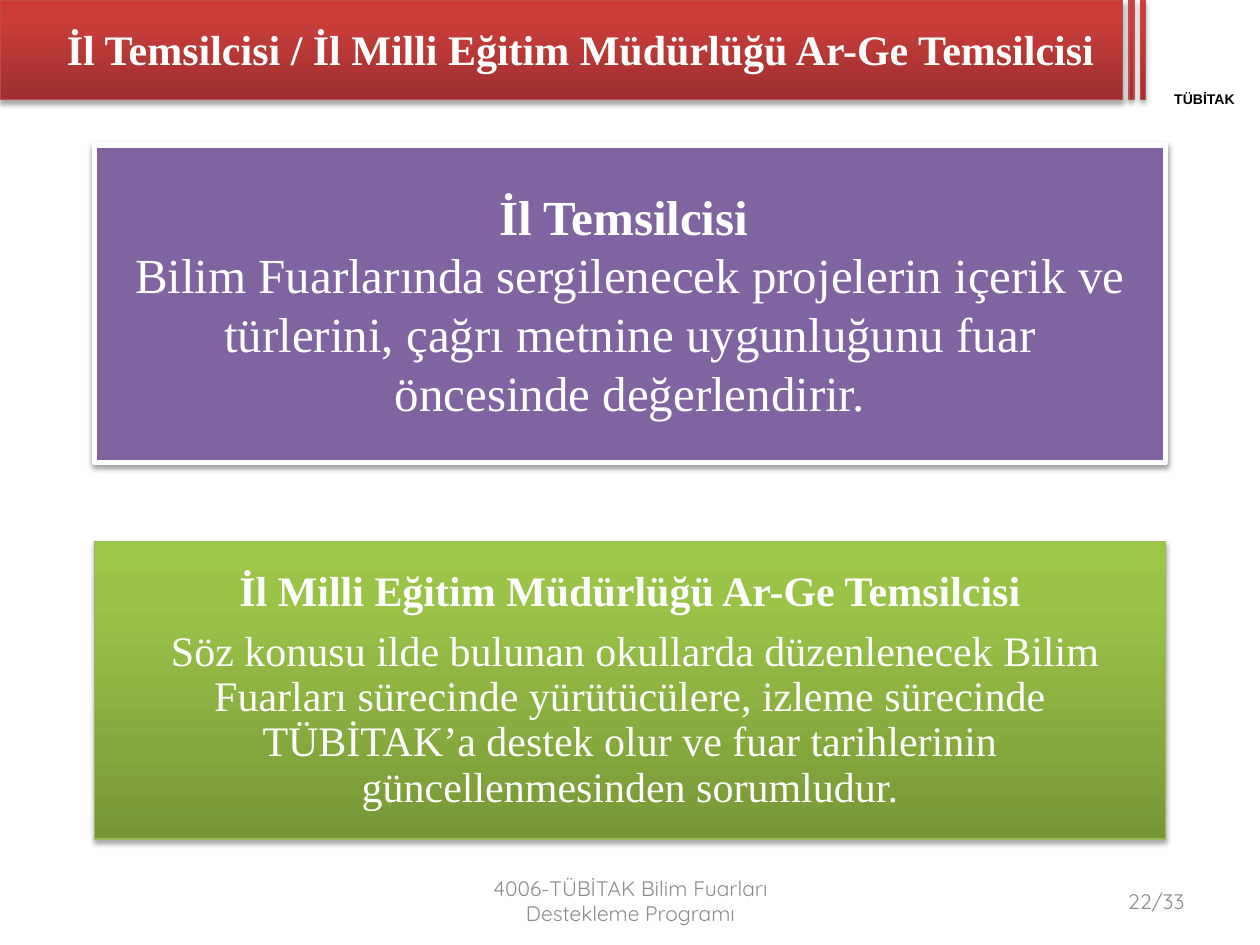
from lxml import etree
from pptx import Presentation
from pptx.dml.color import RGBColor
from pptx.enum.shapes import MSO_SHAPE
from pptx.enum.text import MSO_ANCHOR, MSO_AUTO_SIZE, PP_ALIGN
from pptx.oxml import parse_xml
from pptx.oxml.ns import nsdecls
from pptx.util import Inches, Pt

WHITE = RGBColor(0xFF, 0xFF, 0xFF)
BLACK = RGBColor(0x00, 0x00, 0x00)
GRAY = RGBColor(0x8C, 0x8C, 0x8C)
PURPLE = RGBColor(0x80, 0x64, 0xA2)
RED_LINE = RGBColor(0xBF, 0x4C, 0x48)
RED_FADE = [
    (0, RGBColor(0x9C, 0x2F, 0x2D)),
    (80, RGBColor(0xCB, 0x3E, 0x3A)),
    (100, RGBColor(0xCE, 0x3B, 0x37)),
]
GREEN_LINE = RGBColor(0x98, 0xB9, 0x55)
GREEN_FADE = [
    (0, RGBColor(0x77, 0x97, 0x37)),
    (80, RGBColor(0x9B, 0xC3, 0x48)),
    (100, RGBColor(0x9D, 0xC7, 0x46)),
]
SERIF = "Times New Roman"
ROUND = "Quicksand"


def set_font(para, face, size, color, bold=False):
    for run in para.runs:
        font = run.font
        font.name, font.size, font.bold = face, Pt(size), bold
        font.color.rgb = color


def fade(shape, stops):
    shape.fill.gradient()
    shape.fill.gradient_angle = 90
    group = shape.fill._fill._gradFill.gsLst
    for stop in list(group):
        group.remove(stop)
    for place, color in stops:
        group.append(parse_xml(
            f'<a:gs {nsdecls("a")} pos="{place * 1000}"><a:srgbClr val="{color}"/></a:gs>'))


def add_shadow(shape, alpha, drop):
    shape.shadow.inherit = False
    effects = shape._element.spPr.find("{*}effectLst")
    effects.append(etree.fromstring(
        f'<a:outerShdw {nsdecls("a")} blurRad="{Pt(3.1)}" dist="{Pt(drop)}" '
        f'dir="5400000" rotWithShape="0"><a:srgbClr val="000000">'
        f'<a:alpha val="{alpha * 1000}"/></a:srgbClr></a:outerShdw>'))


def add_box(slide, box, fill, line, width, alpha=35, drop=1.8):
    shape = slide.shapes.add_shape(MSO_SHAPE.RECTANGLE, *map(Inches, box))
    if isinstance(fill, list):
        fade(shape, fill)
    else:
        shape.fill.solid()
        shape.fill.fore_color.rgb = fill
    shape.line.color.rgb = line
    shape.line.width = Pt(width)
    add_shadow(shape, alpha, drop)
    return shape


def add_label(slide, box, text, align, face, size, color, bold=False, inset=None):
    frame = slide.shapes.add_textbox(*map(Inches, box)).text_frame
    frame.word_wrap = True
    frame.vertical_anchor = MSO_ANCHOR.MIDDLE
    if inset is not None:
        frame.margin_left = frame.margin_right = Inches(inset)
        frame.margin_top = frame.margin_bottom = Inches(inset)
    frame.text = text
    para = frame.paragraphs[0]
    para.alignment = align
    set_font(para, face, size, color, bold)


def add_banner(slide, box, text):
    left, top, width, height = box
    add_box(slide, box, RED_FADE, RED_LINE, 0.75)
    for step in range(2):
        stripe = (left + width + 0.05 + 0.09 * step, top, 0.04, height)
        add_box(slide, stripe, RED_FADE, RED_LINE, 0.75)
    title = slide.shapes.title
    title.left, title.top = Inches(left + 0.43), Inches(top)
    title.width, title.height = Inches(8.5), Inches(0.77)
    frame = title.text_frame
    frame.text = text
    frame.word_wrap = True
    frame.auto_size = MSO_AUTO_SIZE.NONE
    frame.vertical_anchor = MSO_ANCHOR.MIDDLE
    para = frame.paragraphs[0]
    para.alignment = PP_ALIGN.LEFT
    set_font(para, SERIF, 24, WHITE, True)
    slide.shapes._spTree.append(title._element)


def add_card(shape, head, body, size, space=None, after=0):
    frame = shape.text_frame
    frame.word_wrap = True
    frame.vertical_anchor = MSO_ANCHOR.MIDDLE
    frame.margin_left = frame.margin_right = Inches(0.24)
    frame.margin_top = frame.margin_bottom = Inches(0.21)
    frame.text = f"{head}\n{body}"
    for para, bold in zip(frame.paragraphs, (True, False)):
        para.alignment = PP_ALIGN.CENTER
        para.line_spacing = space
        set_font(para, SERIF, size, WHITE, bold)
    frame.paragraphs[0].space_after = Pt(after)


def add_footer(slide, top, height):
    add_label(slide, (3.42, top, 3.17, height),
              "4006-TÜBİTAK Bilim Fuarları Destekleme Programı",
              PP_ALIGN.CENTER, ROUND, 12, GRAY)
    add_label(slide, (7.17, top, 2.33, height), "22/33",
              PP_ALIGN.RIGHT, ROUND, 12, GRAY)


def main():
    deck = Presentation()
    deck.slide_width, deck.slide_height = Inches(10), Inches(7.5)
    slide = deck.slides.add_slide(deck.slide_layouts[5])
    add_banner(slide, (0, 0, 8.91, 0.79),
               "İl Temsilcisi / İl Milli Eğitim Müdürlüğü Ar-Ge Temsilcisi")
    add_label(slide, (9.05, 0.72, 1.02, 0.13), "TÜBİTAK",
              PP_ALIGN.CENTER, "Arial", 8, BLACK, True, 0)
    top = add_box(slide, (0.75, 1.15, 8.5, 2.52), PURPLE, WHITE, 3, 38, 1.6)
    add_card(top, "İl Temsilcisi ",
             "Bilim Fuarlarında sergilenecek projelerin içerik ve türlerini, çağrı "
             "metnine uygunluğunu fuar öncesinde değerlendirir.", 28)
    low = add_box(slide, (0.75, 4.3, 8.5, 2.36), GREEN_FADE, GREEN_LINE, 0.75)
    add_card(low, "İl Milli Eğitim Müdürlüğü Ar-Ge Temsilcisi",
             " Söz konusu ilde bulunan okullarda düzenlenecek Bilim Fuarları sürecinde "
             "yürütücülere, izleme sürecinde TÜBİTAK’a destek olur ve fuar tarihlerinin "
             "güncellenmesinden sorumludur.", 24, 0.9, 8.4)
    add_footer(slide, 6.95, 0.4)
    deck.save("out.pptx")


if __name__ == "__main__":
    main()
